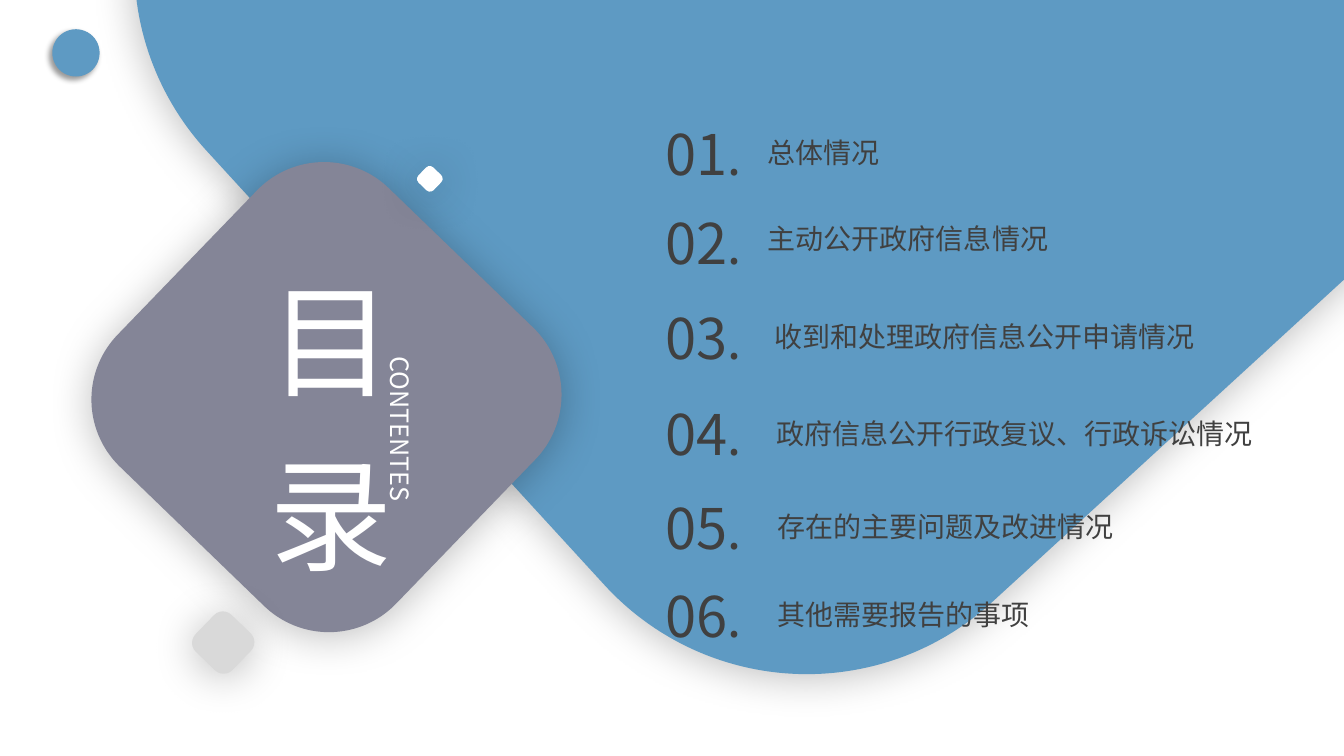
from lxml import etree
from pptx import Presentation
from pptx.dml.color import RGBColor
from pptx.enum import shapes, text
from pptx.oxml.ns import qn
from pptx.util import Pt

FONT = "Noto Sans CJK SC"
BLUE, MAUVE, SILVER, WHITE, INK = "5E9AC3", "848597", "D9D9D9", "FFFFFF", "404040"
SOFT_SHADOW = {"alpha": 25, "blur": 31, "distance": 3, "angle": 90}
TIGHT_SHADOW = {"alpha": 40, "blur": 4, "distance": 3, "angle": 135}

# label, top of the row, left of the label and its drop below the row top
TOPICS = [
    ("总体情况", 82, 73, 11.6),
    ("主动公开政府信息情况", 145.5, 73, 9.3),
    ("收到和处理政府信息公开申请情况", 213.2, 77.5, 11.5),
    ("政府信息公开行政复议、行政诉讼情况", 281.5, 79, 12.2),
    ("存在的主要问题及改进情况", 349.2, 79.7, 11.5),
    ("其他需要报告的事项", 411.8, 79.7, 11.5),
]


def color(hex_code):
    return RGBColor.from_string(hex_code)


def add_shadow(shape, alpha, blur, distance, angle):
    shape.shadow.inherit = False
    effects = shape._element.spPr.find(qn("a:effectLst"))
    outer = etree.SubElement(effects, qn("a:outerShdw"), {
        "blurRad": str(Pt(blur)), "dist": str(Pt(distance)),
        "dir": str(angle * 60000), "algn": "ctr", "rotWithShape": "0"})
    black = etree.SubElement(outer, qn("a:srgbClr"), val="000000")
    etree.SubElement(black, qn("a:alpha"), val=str(alpha * 1000))


def add_ornament(slide, left, top, size, fill, rotation=314, shadow=SOFT_SHADOW,
                 kind=shapes.MSO_SHAPE.ROUNDED_RECTANGLE):
    ornament = slide.shapes.add_shape(kind, Pt(left), Pt(top), Pt(size), Pt(size))
    if kind == shapes.MSO_SHAPE.ROUNDED_RECTANGLE:
        ornament.adjustments[0] = 0.241
    ornament.rotation = rotation
    ornament.fill.solid()
    ornament.fill.fore_color.rgb = color(fill)
    ornament.line.fill.background()
    add_shadow(ornament, **shadow)


def add_run(paragraph, words, size, hex_code):
    run = paragraph.add_run()
    run.text = words
    for key, value in {"name": FONT, "size": Pt(size)}.items():
        setattr(run.font, key, value)
    run.font.color.rgb = color(hex_code)
    etree.SubElement(run._r.get_or_add_rPr(), qn("a:ea"), typeface=FONT)


def add_text(slide, left, top, width, height, runs, hex_code):
    """Add a one-paragraph box; runs holds (words, size) pairs."""
    box = slide.shapes.add_textbox(Pt(left), Pt(top), Pt(width), Pt(height))
    frame = box.text_frame
    frame.word_wrap = True
    frame.auto_size = text.MSO_AUTO_SIZE.SHAPE_TO_FIT_TEXT
    for words, size in runs:
        add_run(frame.paragraphs[0], words, size, hex_code)
    return frame


def place_title(slide, left, top, width, height):
    """Stack the two title characters and bring them in front of the badge."""
    title = slide.shapes.title
    place = {"left": left, "top": top, "width": width, "height": height}
    for key, value in place.items():
        setattr(title, key, Pt(value))
    frame = title.text_frame
    frame.auto_size = text.MSO_AUTO_SIZE.NONE
    frame.vertical_anchor = text.MSO_ANCHOR.TOP
    frame.add_paragraph()
    for paragraph, character in zip(frame.paragraphs, "目录"):
        paragraph.alignment = text.PP_ALIGN.CENTER
        paragraph.line_spacing = Pt(124.6)
        add_run(paragraph, character, 88, WHITE)
    slide.shapes._spTree.append(title._element)


def add_badge(slide, left, top, size):
    add_ornament(slide, left, top, size, MAUVE)
    place_title(slide, left + 90, top + 20.5, 102, 257)
    caption = add_text(slide, left + 169.2, top + 102.2, 36, 157,
                       [("CONTENTES", 18)], WHITE)
    caption._txBody.bodyPr.set("vert", "eaVert")
    caption.paragraphs[0].alignment = text.PP_ALIGN.JUSTIFY


def add_topics(slide, left):
    for number, (label, top, indent, drop) in enumerate(TOPICS, 1):
        add_text(slide, left, top, 88, 55.4, [(f"{number:02}", 40), (".", 36)], INK)
        add_text(slide, left + indent, top + drop, 365, 31.7, [(label, 20)], INK)


def build_contents(slide):
    add_ornament(slide, 182.9, -418.3, 812.9, BLUE, rotation=317.5)
    add_ornament(slide, 37.4, 20.9, 33.8, BLUE, rotation=0,
                 shadow=TIGHT_SHADOW, kind=shapes.MSO_SHAPE.OVAL)
    add_badge(slide, 95, 145.4, 276.5)
    add_ornament(slide, 141.1, 440.6, 36.7, SILVER)
    add_ornament(slide, 299.5, 120.2, 15.1, WHITE)
    add_topics(slide, 468.3)


def main():
    deck = Presentation()
    deck.slide_width, deck.slide_height = Pt(960), Pt(540)
    build_contents(deck.slides.add_slide(deck.slide_layouts[5]))
    deck.save("out.pptx")


if __name__ == "__main__":
    main()
